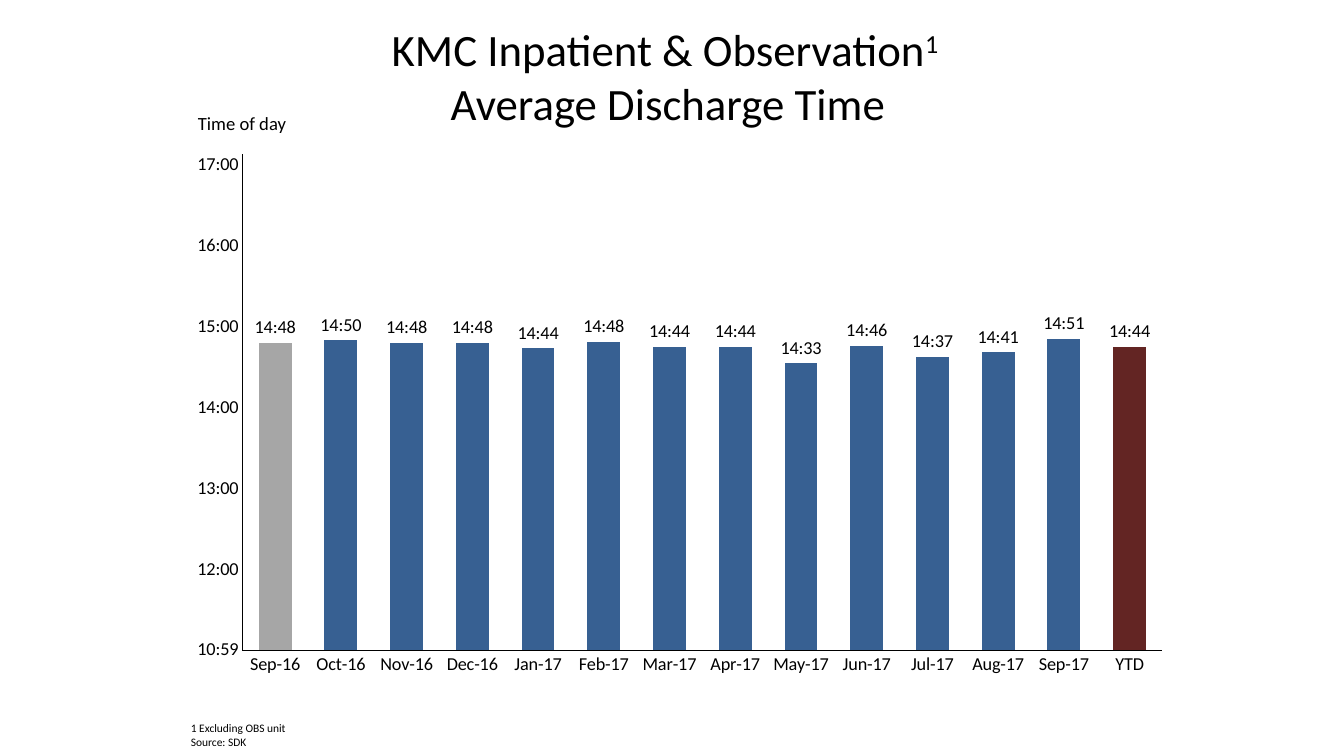
from lxml import etree
from pptx import Presentation
from pptx import util as u
from pptx.chart.data import CategoryChartData
from pptx.dml.color import RGBColor
from pptx.enum import chart as ch, text
from pptx.oxml import ns

BLACK, GREY, BLUE, RED = "000000", "A6A6A6", "376092", "632523"
TIME_FORMAT = "h:mm;@"
DISCHARGE_TIMES = {
    "Sep-16": "14:48", "Oct-16": "14:50", "Nov-16": "14:48", "Dec-16": "14:48",
    "Jan-17": "14:44", "Feb-17": "14:49", "Mar-17": "14:45", "Apr-17": "14:45",
    "May-17": "14:33", "Jun-17": "14:46", "Jul-17": "14:38", "Aug-17": "14:41",
    "Sep-17": "14:51", "YTD": "14:45",
}


def px(length):
    return u.Emu(round(length * 914400 / 100.8))


def color(hex_string):
    return RGBColor.from_string(hex_string)


def day_fraction(clock):
    hours, minutes = clock.split(":")
    return round((int(hours) * 60 + int(minutes)) / 1440, 6)


class SlideBuilder:
    font_name = "Calibri"

    def __init__(self, presentation):
        self.slide = presentation.slides.add_slide(presentation.slide_layouts[6])

    def style(self, font, size):
        font.name = self.font_name
        font.size = u.Pt(size)
        font.bold = False
        font.color.rgb = color(BLACK)

    def text_box(self, left, top, width, height, lines, size, wrap=False):
        shape = self.slide.shapes.add_textbox(px(left), px(top), px(width), px(height))
        frame = shape.text_frame
        frame.word_wrap = wrap
        frame.text = "\n".join(lines)
        for paragraph in frame.paragraphs:
            self.style(paragraph.font, size)
        return frame

    def title(self, left, top, width, height, first, mark, second, size):
        frame = self.text_box(left, top, width, height, [first], size, wrap=True)
        frame.vertical_anchor = text.MSO_ANCHOR.MIDDLE
        frame.margin_top = frame.margin_bottom = 0
        paragraph = frame.paragraphs[0]
        paragraph.alignment = text.PP_ALIGN.CENTER
        superscript = paragraph.add_run()
        superscript.text = mark
        superscript.font._element.set("baseline", "30000")
        paragraph.add_line_break()
        paragraph.add_run().text = second

    def axis(self, axis, size):
        axis.has_major_gridlines = False
        axis.major_tick_mark = axis.minor_tick_mark = ch.XL_TICK_MARK.NONE
        axis.format.line.color.rgb = color(BLACK)
        axis.format.line.width = u.Pt(0.75)
        self.style(axis.tick_labels.font, size)

    def plot_layout(self, chart, x, y, w, h):
        plot_area = chart._chartSpace.chart.plotArea
        for old in plot_area.findall(ns.qn("c:layout")):
            plot_area.remove(old)
        layout = etree.Element(ns.qn("c:layout"))
        manual = etree.SubElement(layout, ns.qn("c:manualLayout"))
        settings = dict(layoutTarget="inner", xMode="edge", yMode="edge", x=x, y=y, w=w, h=h)
        for name, value in settings.items():
            etree.SubElement(manual, ns.qn("c:" + name)).set("val", str(value))
        plot_area.insert(0, layout)

    def column_chart(self, left, top, width, height, times, point_colors, size):
        data = CategoryChartData(number_format=TIME_FORMAT)
        data.categories = list(times)
        data.add_series("Series 1", [day_fraction(clock) for clock in times.values()])
        chart = self.slide.shapes.add_chart(
            ch.XL_CHART_TYPE.COLUMN_CLUSTERED,
            px(left), px(top), px(width), px(height), data).chart
        chart.has_legend = chart.has_title = False
        self.style(chart.font, 10)

        # Axes
        self.axis(chart.category_axis, size)
        value_axis = chart.value_axis
        self.axis(value_axis, size)
        value_axis.minimum_scale = day_fraction("11:00")
        value_axis.maximum_scale = 0.714
        value_axis.major_unit = 0.0417
        value_axis.tick_labels.number_format = TIME_FORMAT
        value_axis.tick_labels.number_format_is_linked = False

        # Columns and their labels
        plot = chart.plots[0]
        plot.gap_width = 100
        plot.vary_by_categories = False
        series = plot.series[0]
        for index, point_color in enumerate(point_colors):
            fill = series.points[index].format.fill
            fill.solid()
            fill.fore_color.rgb = color(point_color)
        labels = series.data_labels
        labels.show_value = True
        labels.position = ch.XL_LABEL_POSITION.OUTSIDE_END
        labels.number_format = TIME_FORMAT
        labels.number_format_is_linked = False
        self.style(labels.font, size)
        self.plot_layout(chart, 0.071, 0.062, 0.929, 0.87)


def main():
    presentation = Presentation()
    presentation.slide_width, presentation.slide_height = px(1344), px(756)
    builder = SlideBuilder(presentation)

    # Title
    builder.title(229, 59, 878, 33, "KMC Inpatient & Observation", "1 ",
                  "Average Discharge Time", 32)

    # Chart: last year's month grey, this year's months blue, year to date red
    months = len(DISCHARGE_TIMES) - 2
    builder.column_chart(172, 119, 991, 570, DISCHARGE_TIMES,
                         [GREY] + [BLUE] * months + [RED], 13)

    # Footnote and axis caption
    builder.text_box(181, 716, 119, 38, ["1 Excluding OBS unit", "Source: SDK"], 8.2)
    builder.text_box(188, 107, 112, 33, ["Time of day"], 13.3)

    presentation.save("out.pptx")


if __name__ == "__main__":
    main()
